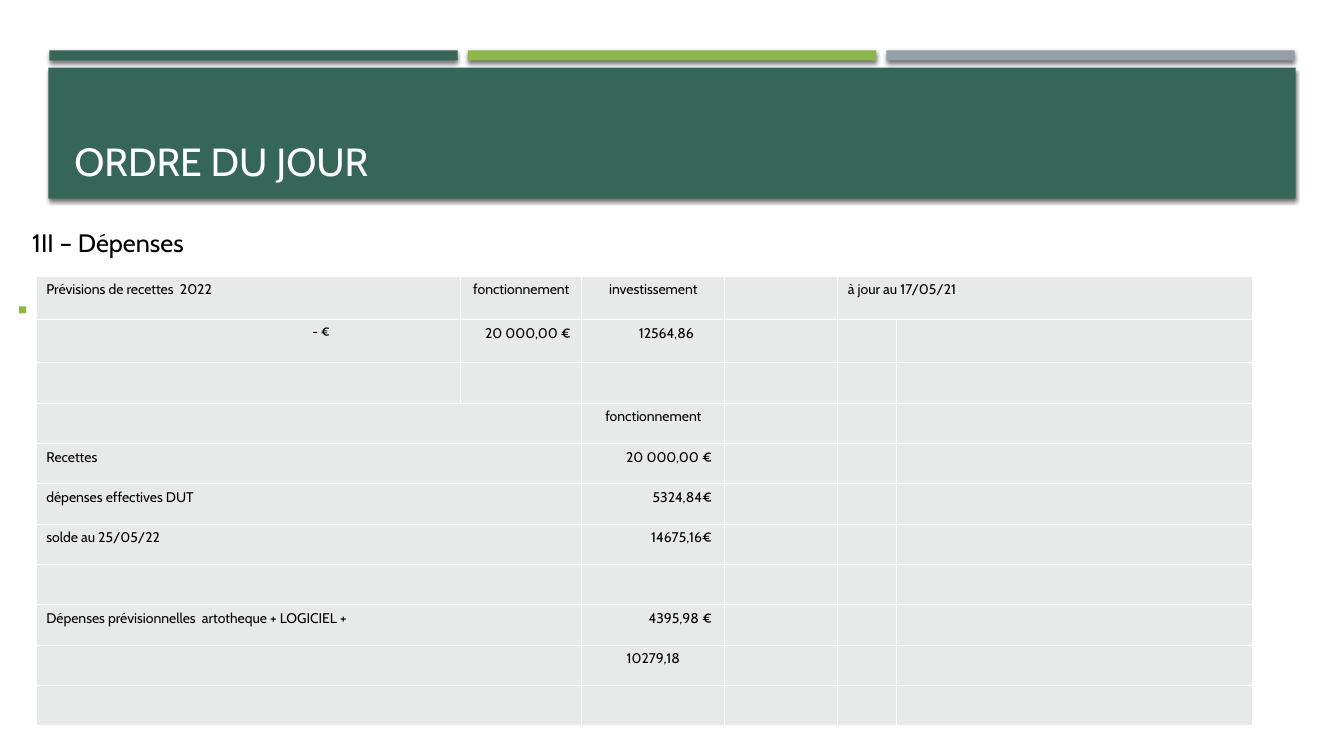
from dataclasses import dataclass
from lxml.etree import SubElement
from pptx import Presentation
from pptx.dml.color import RGBColor
from pptx.enum.shapes import MSO_SHAPE
from pptx.enum.text import MSO_ANCHOR, PP_ALIGN
from pptx.oxml.ns import qn
from pptx.util import Inches, Pt


@dataclass(frozen=True)
class Theme:
    font: str = "Cabin"
    green: str = "366658"
    lime: str = "8CB64A"
    grey: str = "969FA7"
    cell: str = "E8EAE9"
    white: str = "FFFFFF"
    black: str = "000000"
    title_size: int = 28
    heading_size: int = 18
    body_size: int = 10
    small_size: int = 9
    border: float = 0.96


THEME = Theme()
TITLE = "ORDRE DU JOUR"
HEADING = "1II – Dépenses"

LEFT, CENTER, RIGHT = PP_ALIGN.LEFT, PP_ALIGN.CENTER, PP_ALIGN.RIGHT
COLUMNS = [4.21, 1.2, 1.42, 1.12, 0.58, 3.53]
ROWS = [0.43] * 2 + [0.4] * 9
HEADER_ROW = [
    ("Prévisions de recettes  2022", LEFT),
    ("fonctionnement", CENTER),
    ("investissement", CENTER),
    ("", LEFT),
    ("à jour au 17/05/21", LEFT),
]
FORECAST_ROW = [("- €", 1.3), ("20 000,00 €", 0.11), ("12564,86", 0.31)]
BALANCE_ROWS = [
    ("", "fonctionnement", CENTER),
    ("Recettes", "20 000,00 €", RIGHT),
    ("dépenses effectives DUT", "5324,84€", RIGHT),
    ("solde au 25/05/22", "14675,16€", RIGHT),
    ("", "", LEFT),
    ("Dépenses prévisionnelles  artotheque + LOGICIEL +", "4395,98 €", RIGHT),
    ("", "10279,18", CENTER),
    ("", "", LEFT),
]
BALANCE_START = 3
AMOUNT_COLUMN = 2
AMOUNT_MARGIN = 0.13

BAND_LEFT, BAND_TOP, BAND_WIDTH, BAND_HEIGHT = 0.48, 0.67, 12.37, 1.3
STRIPE_LEFT, STRIPE_TOP, STRIPE_WIDTH, STRIPE_HEIGHT, STRIPE_STEP = 0.49, 0.5, 4.05, 0.1, 4.15


def style(paragraph, size, color, align=LEFT):
    paragraph.alignment = align
    paragraph.font.name = THEME.font
    paragraph.font.size = Pt(size)
    paragraph.font.color.rgb = RGBColor.from_string(color)


def add_shadow(shape):
    effects = shape._element.spPr.find(qn("a:effectLst"))
    shadow = SubElement(effects, qn("a:outerShdw"), blurRad=str(Pt(3)), dist=str(Pt(2)),
                        dir="5400000", algn="ctr", rotWithShape="0")
    color = SubElement(shadow, qn("a:srgbClr"), val=THEME.black)
    SubElement(color, qn("a:alpha"), val="55000")


def add_block(slide, box, color, shadowed=True):
    shape = slide.shapes.add_shape(MSO_SHAPE.RECTANGLE, *map(Inches, box))
    shape.shadow.inherit = False
    shape.fill.solid()
    shape.fill.fore_color.rgb = RGBColor.from_string(color)
    shape.line.fill.background()
    if shadowed:
        add_shadow(shape)


def add_text(slide, box, text, size, color, anchor=MSO_ANCHOR.TOP, wrap=True):
    frame = slide.shapes.add_textbox(*map(Inches, box)).text_frame
    frame.word_wrap = wrap
    frame.vertical_anchor = anchor
    frame.text = text
    style(frame.paragraphs[0], size, color)


def format_cell(cell):
    properties = cell._tc.get_or_add_tcPr()
    for side in ("lnL", "lnR", "lnT", "lnB"):
        line = SubElement(properties, qn(f"a:{side}"), w=str(Pt(THEME.border)))
        fill = SubElement(line, qn("a:solidFill"))
        SubElement(fill, qn("a:srgbClr"), val=THEME.white)
    cell.fill.solid()
    cell.fill.fore_color.rgb = RGBColor.from_string(THEME.cell)
    style(cell.text_frame.paragraphs[0], THEME.body_size, THEME.black)


def write(cell, text, align, margin=0.1, size=THEME.body_size):
    cell.text = text
    cell.margin_right = Inches(margin)
    style(cell.text_frame.paragraphs[0], size, THEME.black, align)


def add_budget(slide):
    box = (0.36, 2.74, sum(COLUMNS), sum(ROWS))
    table = slide.shapes.add_table(len(ROWS), len(COLUMNS), *map(Inches, box)).table
    table.first_row = table.horz_banding = False
    for column, width in zip(table.columns, COLUMNS):
        column.width = Inches(width)
    for row, height in zip(table.rows, ROWS):
        row.height = Inches(height)
    for cell in table.iter_cells():
        format_cell(cell)

    table.cell(0, 4).merge(table.cell(0, 5))
    for column, (text, align) in enumerate(HEADER_ROW):
        write(table.cell(0, column), text, align)
    for column, (text, margin) in enumerate(FORECAST_ROW):
        size = THEME.body_size if column else THEME.small_size
        write(table.cell(1, column), text, RIGHT, margin, size)
    for row, (label, amount, align) in enumerate(BALANCE_ROWS, BALANCE_START):
        table.cell(row, 0).merge(table.cell(row, 1))
        write(table.cell(row, 0), label, LEFT)
        margin = AMOUNT_MARGIN if align == RIGHT else 0.1
        write(table.cell(row, AMOUNT_COLUMN), amount, align, margin)


def main():
    presentation = Presentation()
    presentation.slide_width, presentation.slide_height = Inches(13.33), Inches(7.5)
    slide = presentation.slides.add_slide(presentation.slide_layouts[6])
    for index, color in enumerate((THEME.green, THEME.lime, THEME.grey)):
        left = STRIPE_LEFT + index * STRIPE_STEP
        add_block(slide, (left, STRIPE_TOP, STRIPE_WIDTH, STRIPE_HEIGHT), color)
    add_block(slide, (BAND_LEFT, BAND_TOP, BAND_WIDTH, BAND_HEIGHT), THEME.green)
    add_text(slide, (0.64, 0.77, 12.06, 1.11), TITLE, THEME.title_size, THEME.white,
             MSO_ANCHOR.BOTTOM)
    add_text(slide, (0.22, 2.21, 2.02, 0.4), HEADING, THEME.heading_size, THEME.black,
             wrap=False)
    add_block(slide, (0.19, 3.04, 0.07, 0.07), THEME.lime, shadowed=False)
    add_budget(slide)
    presentation.save("out.pptx")


if __name__ == "__main__":
    main()
